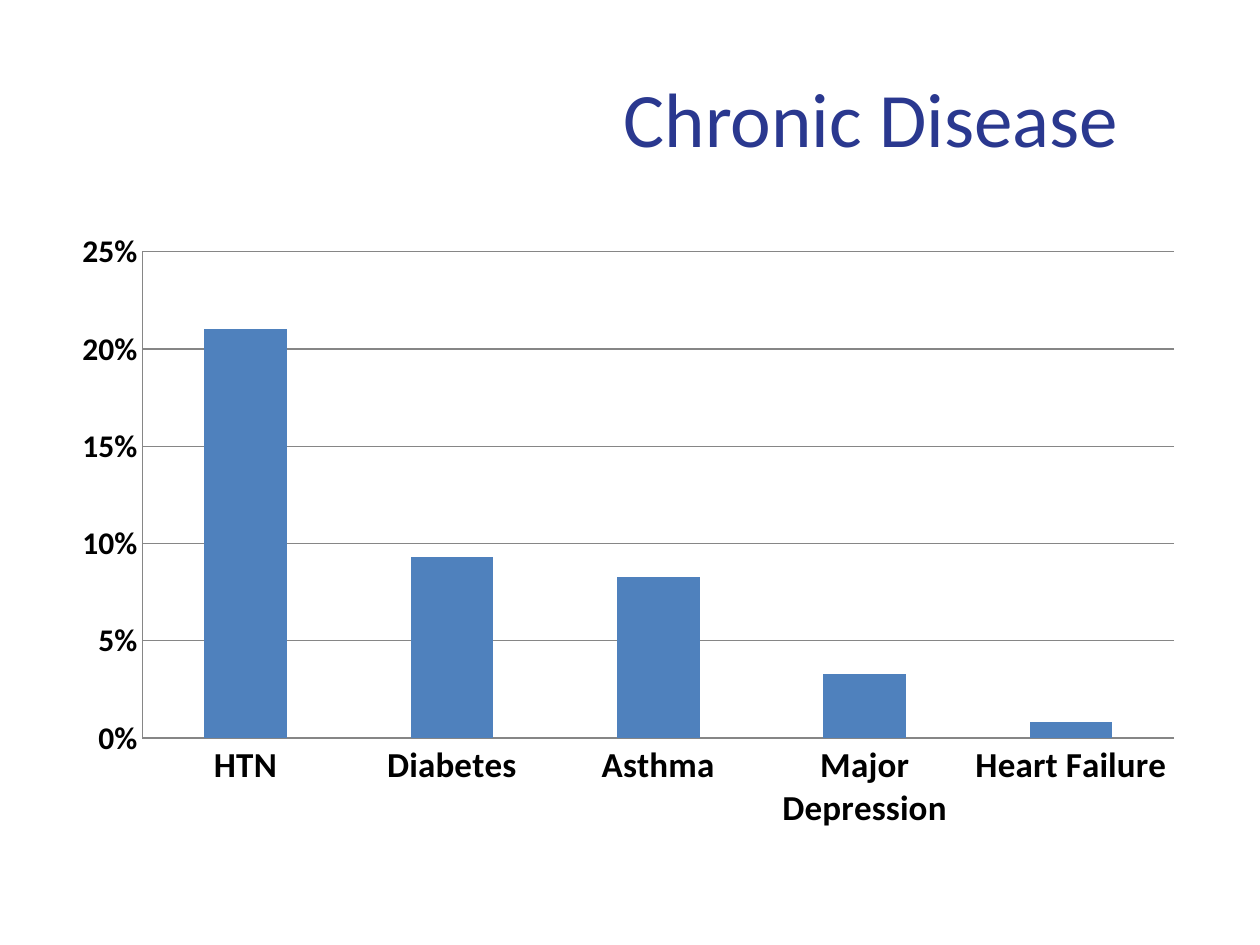
from dataclasses import dataclass

from lxml.etree import SubElement
from pptx import Presentation
from pptx.chart.data import CategoryChartData
from pptx.dml.color import RGBColor
from pptx.enum.chart import XL_CHART_TYPE as ChartType, XL_TICK_MARK as TickMark
from pptx.enum.text import MSO_ANCHOR as Anchor, PP_ALIGN as Align
from pptx.oxml import parse_xml
from pptx.oxml.ns import nsdecls, qn
from pptx.util import Inches, Pt

FONT = "Calibri"
TITLE_BLUE, BAR_BLUE, GRID_GRAY, BLACK = "2A388F", "4F81BD", "868686", "000000"


@dataclass
class Condition:
    name: str
    prevalence: float


CONDITIONS = [
    Condition("HTN", 0.21),
    Condition("Diabetes", 0.093),
    Condition("Asthma", 0.083),
    Condition("Major Depression", 0.033),
    Condition("Heart Failure", 0.008),
]


def color(hex_code: str) -> RGBColor:
    return RGBColor.from_string(hex_code)


def style_line(line, hex_code: str) -> None:
    line.width = Pt(0.75)
    line.color.rgb = color(hex_code)


def style_axis(axis, size: int) -> None:
    axis.major_tick_mark = axis.minor_tick_mark = TickMark.NONE
    axis.tick_labels.font.size = Pt(size)
    axis.tick_labels.font.bold = True
    style_line(axis.format.line, GRID_GRAY)


def place_plot(chart, x: float, y: float, w: float, h: float) -> None:
    plot_area = chart._chartSpace.chart.plotArea
    for old in plot_area.findall(qn("c:layout")):
        plot_area.remove(old)
    layout = parse_xml(f"<c:layout {nsdecls('c')}><c:manualLayout/></c:layout>")
    settings = {"layoutTarget": "inner", "xMode": "edge", "yMode": "edge",
                "x": x, "y": y, "w": w, "h": h}
    for tag, value in settings.items():
        SubElement(layout[0], qn(f"c:{tag}")).set("val", str(value))
    plot_area.insert(0, layout)


def add_title(slide, text: str) -> None:
    title = slide.shapes.add_textbox(Inches(4.33), Inches(0.3), Inches(5.17), Inches(1.25))
    frame = title.text_frame
    frame.word_wrap = True
    frame.vertical_anchor = Anchor.MIDDLE
    heading = frame.paragraphs[0]
    heading.text = text
    heading.alignment = Align.CENTER
    heading.font.name = FONT
    heading.font.size = Pt(44)
    heading.font.color.rgb = color(TITLE_BLUE)


def add_prevalence_chart(slide, conditions: list[Condition]) -> None:
    data = CategoryChartData(number_format="0%")
    data.categories = [condition.name for condition in conditions]
    data.add_series("Series 1", [condition.prevalence for condition in conditions])
    chart = slide.shapes.add_chart(
        ChartType.COLUMN_CLUSTERED, Inches(0.5), Inches(1.75), Inches(9), Inches(4.95), data
    ).chart
    chart.has_title = chart.has_legend = False
    chart.font.name = FONT
    chart.font.size = Pt(10)
    chart.font.color.rgb = color(BLACK)

    style_axis(chart.category_axis, 20)
    percent = chart.value_axis
    style_axis(percent, 18)
    percent.minimum_scale, percent.maximum_scale, percent.major_unit = 0, 0.25, 0.05
    percent.tick_labels.number_format = "0%"
    percent.tick_labels.number_format_is_linked = False
    percent.has_major_gridlines = True
    style_line(percent.major_gridlines.format.line, GRID_GRAY)

    columns = chart.plots[0]
    columns.gap_width = 150
    columns.vary_by_categories = False
    fill = columns.series[0].format.fill
    fill.solid()
    fill.fore_color.rgb = color(BAR_BLUE)
    place_plot(chart, 0.07, 0.05, 0.91, 0.78)


def main() -> None:
    """Build the chronic disease prevalence slide."""
    deck = Presentation()
    deck.slide_width, deck.slide_height = Inches(10), Inches(7.5)
    slide = deck.slides.add_slide(deck.slide_layouts[6])
    add_title(slide, "Chronic Disease")
    add_prevalence_chart(slide, CONDITIONS)
    deck.save("out.pptx")


if __name__ == "__main__":
    main()
